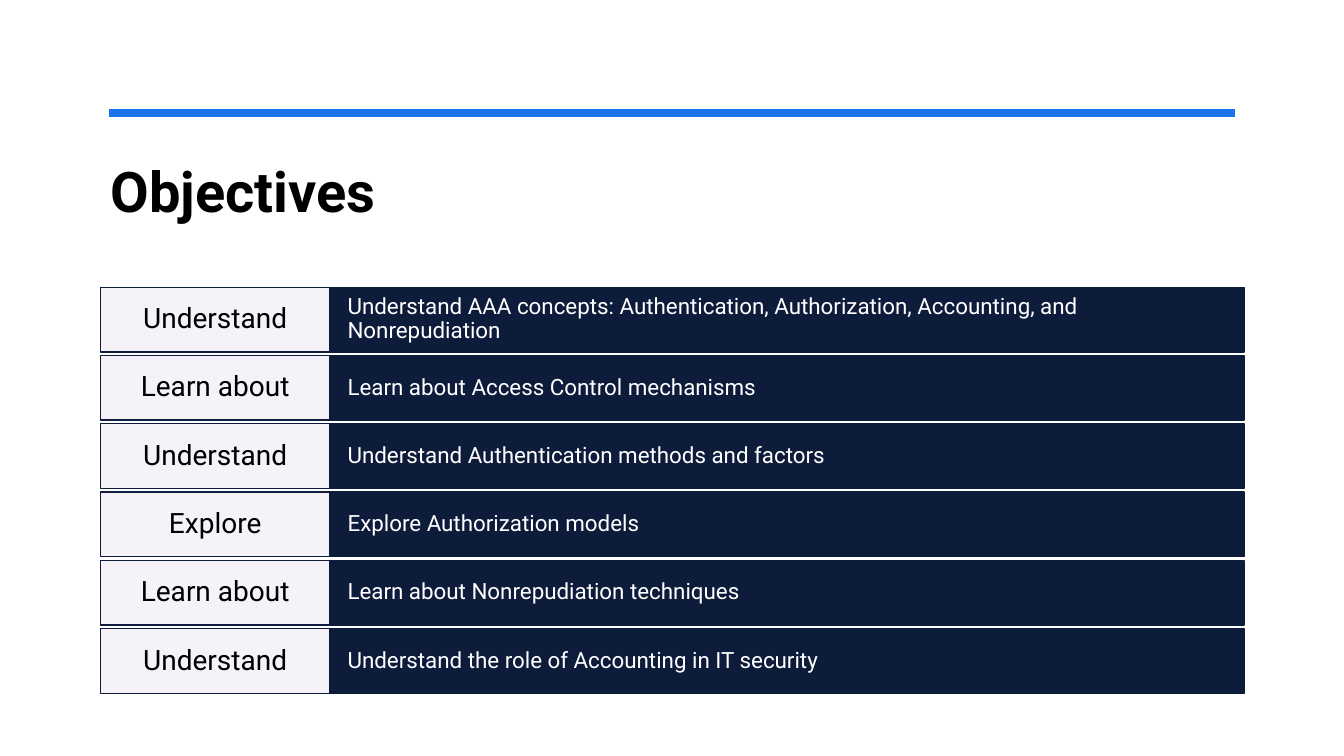
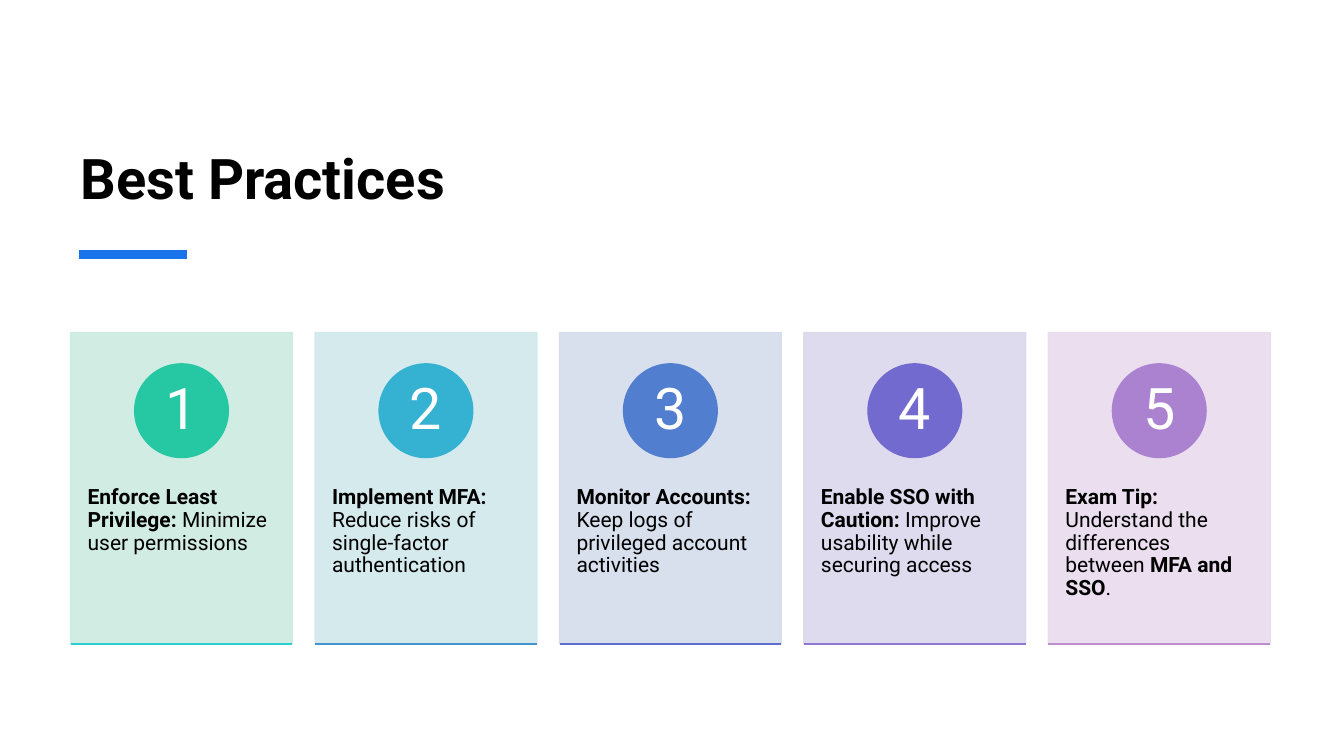
from dataclasses import dataclass

from lxml import etree
from pptx import Presentation
from pptx.dml.color import RGBColor
from pptx.enum.shapes import MSO_CONNECTOR, MSO_SHAPE
from pptx.enum.text import MSO_ANCHOR, PP_ALIGN
from pptx.oxml.ns import qn
from pptx.shapes.autoshape import Shape
from pptx.slide import Slide
from pptx.util import Cm, Pt

RECTANGLE, OVAL = MSO_SHAPE.RECTANGLE, MSO_SHAPE.OVAL
STRAIGHT = MSO_CONNECTOR.STRAIGHT
TOP, MIDDLE, BOTTOM = MSO_ANCHOR.TOP, MSO_ANCHOR.MIDDLE, MSO_ANCHOR.BOTTOM
LEFT, CENTER = PP_ALIGN.LEFT, PP_ALIGN.CENTER

FONT = "Roboto"
BLACK, WHITE = "000000", "FFFFFF"
ACCENT, NAVY, LAVENDER = "1973EB", "0D1C3B", "F5F2F9"


@dataclass(frozen=True)
class Area:
    """A rectangle on the page, in centimetres."""
    left: float
    top: float
    width: float
    height: float

    def lengths(self) -> tuple[Cm, Cm, Cm, Cm]:
        return Cm(self.left), Cm(self.top), Cm(self.width), Cm(self.height)


@dataclass(frozen=True)
class Span:
    text: str
    bold: bool = False


@dataclass(frozen=True)
class Objective:
    label: str
    detail: str


@dataclass(frozen=True)
class Practice:
    spans: tuple[Span, ...]
    fill: str
    badge: str
    rule: str


OBJECTIVES = (
    Objective("Understand", "Understand AAA concepts: Authentication, Authorization, "
                            "Accounting, and Nonrepudiation"),
    Objective("Learn about", "Learn about Access Control mechanisms"),
    Objective("Understand", "Understand Authentication methods and factors"),
    Objective("Explore", "Explore Authorization models"),
    Objective("Learn about", "Learn about Nonrepudiation techniques"),
    Objective("Understand", "Understand the role of Accounting in IT security"),
)

PRACTICES = (
    Practice((Span("Enforce Least Privilege:", True), Span(" Minimize user permissions")),
             "CDEBE0", "25C8A2", "2BCFCD"),
    Practice((Span("Implement MFA:", True),
              Span(" Reduce risks of single-factor authentication")),
             "D1E8EC", "35B1D1", "4395D0"),
    Practice((Span("Monitor Accounts:", True),
              Span(" Keep logs of privileged account activities")),
             "D4DCEC", "517ECF", "5E6ECF"),
    Practice((Span("Enable SSO with Caution:", True),
              Span(" Improve usability while securing access")),
             "DCD8ED", "726ACF", "9177CF"),
    Practice((Span("Exam Tip:", True), Span(" Understand the differences between "),
              Span("MFA and SSO", True), Span(".")),
             "E8DBEE", "AA82D0", "BF8ED1"),
)


def rgb(color: str) -> RGBColor:
    return RGBColor.from_string(color)


def write_text(box: Shape, *spans: Span, size: float, color: str = BLACK,
               align: PP_ALIGN = LEFT, anchor: MSO_ANCHOR = MIDDLE,
               side_inset: float = 0.25, top_inset: float = 0.13,
               bottom_inset: float = 0.13, line_spacing: float = 0.9) -> None:
    frame = box.text_frame
    frame.word_wrap = True
    frame.vertical_anchor = anchor
    frame.margin_left = frame.margin_right = Cm(side_inset)
    frame.margin_top, frame.margin_bottom = Cm(top_inset), Cm(bottom_inset)
    para = frame.paragraphs[0]
    para.alignment = align
    para.line_spacing = line_spacing
    for span in spans:
        run = para.add_run()
        run.text = span.text
        run.font.name = FONT
        run.font.size = Pt(size)
        run.font.bold = span.bold
        run.font.color.rgb = rgb(color)


def add_panel(page: Slide, area: Area, fill: str, line: str,
              preset: MSO_SHAPE = RECTANGLE, opacity: int = 100) -> Shape:
    """Add a filled, outlined shape; opacity is a percentage."""
    panel = page.shapes.add_shape(preset, *area.lengths())
    panel.shadow.inherit = False
    panel.fill.solid()
    panel.fill.fore_color.rgb = rgb(fill)
    panel.line.color.rgb = rgb(line)
    panel.line.width = Pt(1)
    if opacity < 100:
        for color in panel._element.spPr.iter(qn("a:srgbClr")):
            etree.SubElement(color, qn("a:alpha"), val=str(opacity * 1000))
    return panel


def add_rule(page: Slide, left: float, right: float, height: float,
             color: str = ACCENT, weight: float = 6) -> None:
    """Add a horizontal line at the given height on the page."""
    rule = page.shapes.add_connector(STRAIGHT, Cm(left), Cm(height), Cm(right), Cm(height))
    rule.line.color.rgb = rgb(color)
    rule.line.width = Pt(weight)
    etree.SubElement(rule._element.spPr, qn("a:effectLst"))


def add_title(page: Slide, text: str, area: Area, anchor: MSO_ANCHOR) -> None:
    box = page.shapes.add_textbox(*area.lengths())
    write_text(box, Span(text, True), size=40, anchor=anchor, line_spacing=1.0)


def add_objective(page: Slide, objective: Objective, top: float) -> None:
    left, label_width, detail_width, height = 2.54, 5.77, 23.04, 1.63
    detail = add_panel(page, Area(left + label_width, top, detail_width, height), NAVY, NAVY)
    write_text(detail, Span(objective.detail), size=16, color=WHITE,
               side_inset=0.45, top_inset=0.4, bottom_inset=0.4)
    label = add_panel(page, Area(left, top, label_width, height), LAVENDER, NAVY)
    write_text(label, Span(objective.label), size=20, align=CENTER, side_inset=0.3)


def add_practice(page: Slide, practice: Practice, number: int, left: float) -> None:
    top, width, height, diameter = 8.38, 5.59, 7.85, 2.36
    card = add_panel(page, Area(left, top, width, height),
                     practice.fill, practice.fill, opacity=90)
    write_text(card, *practice.spans, size=15, anchor=TOP,
               side_inset=0.43, top_inset=3.88, bottom_inset=0.9)
    badge_area = Area(left + (width - diameter) / 2, top + 0.79, diameter, diameter)
    badge = add_panel(page, badge_area, practice.badge, practice.badge, OVAL)
    write_text(badge, Span(str(number)), size=41, color=WHITE, align=CENTER,
               side_inset=0, top_inset=0, bottom_inset=0)
    add_rule(page, left, left + width, top + height, practice.rule, weight=1)


def build_objectives(page: Slide) -> None:
    add_title(page, "Objectives", Area(2.54, 3.81, 28.78, 3.18), TOP)
    add_rule(page, 2.75, 31.12, 2.85)
    for index, objective in enumerate(OBJECTIVES):
        add_objective(page, objective, top=7.24 + index * 1.72)


def build_practices(page: Slide) -> None:
    add_title(page, "Best Practices", Area(1.78, 1.57, 30.25, 3.86), BOTTOM)
    add_rule(page, 1.98, 4.7, 6.41)
    for index, practice in enumerate(PRACTICES):
        add_practice(page, practice, index + 1, left=1.78 + index * 6.16)


def main() -> None:
    deck = Presentation()
    deck.slide_width, deck.slide_height = Cm(33.87), Cm(19.05)
    blank = deck.slide_layouts[6]
    for build in (build_objectives, build_practices):
        build(deck.slides.add_slide(blank))
    deck.save("out.pptx")


if __name__ == "__main__":
    main()
